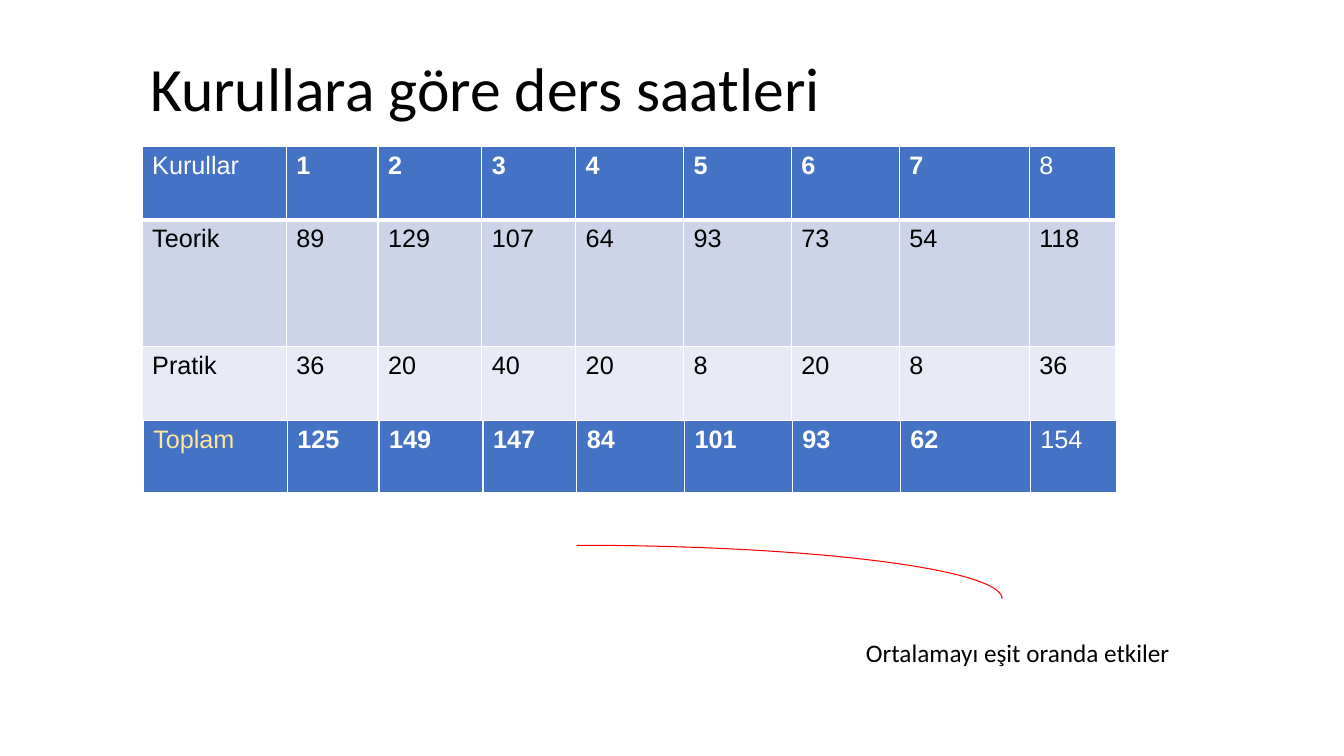
import pptx
import pptx.dml.color
import pptx.enum.shapes
import pptx.enum.text
import pptx.oxml.ns
import pptx.util
from lxml import etree

Inches = pptx.util.Inches
Pt = pptx.util.Pt
RGBColor = pptx.dml.color.RGBColor

BLACK = RGBColor(0x00, 0x00, 0x00)
WHITE = RGBColor(0xFF, 0xFF, 0xFF)
BLUE = RGBColor(0x44, 0x72, 0xC4)
LAVENDER = RGBColor(0xCD, 0xD4, 0xEA)
PALE = RGBColor(0xE8, 0xEB, 0xF5)
GOLD = RGBColor(0xFF, 0xE6, 0x99)
RED = RGBColor(0xFF, 0x00, 0x00)

TITLE = "Kurullara göre ders saatleri"
REMARK = "Ortalamayı eşit oranda etkiler"
COLUMN_WIDTHS = [1.43, 0.91, 1.03, 0.93, 1.07, 1.07, 1.07, 1.29, 0.86]

HEADER = {"height": 0.73, "fill": BLUE, "label": WHITE, "text": WHITE, "bold": True, "bottom": 3}
THEORY = {"height": 1.26, "fill": LAVENDER, "label": BLACK, "text": BLACK, "bold": False, "bottom": 1}
PRACTICE = {**THEORY, "height": 0.73, "fill": PALE}
TOTAL = {**HEADER, "label": GOLD}

HOURS_ROWS = [
    (["Kurullar", "1", "2", "3", "4", "5", "6", "7", "8"], HEADER),
    (["Teorik", "89", "129", "107", "64", "93", "73", "54", "118"], THEORY),
    (["Pratik", "36", "20", "40", "20", "8", "20", "8", "36"], PRACTICE),
]
TOTAL_ROWS = [
    (["Toplam", "125", "149", "147", "84", "101", "93", "62", "154"], TOTAL),
]


def write(paragraph, text, size, font_name, color, bold=False):
    run = paragraph.add_run()
    run.text = text
    font_format = {"size": Pt(size), "name": font_name, "bold": bold}
    for name, value in font_format.items():
        setattr(run.font, name, value)
    run.font.color.rgb = color


def add_text(slide, box, text, size, anchor, line_spacing):
    frame = slide.shapes.add_textbox(*map(Inches, box)).text_frame
    frame.word_wrap = True
    frame.vertical_anchor = anchor
    frame.paragraphs[0].line_spacing = line_spacing
    write(frame.paragraphs[0], text, size, "Calibri", BLACK)


def set_borders(cell, widths):
    properties = cell._tc.get_or_add_tcPr()
    qualified = pptx.oxml.ns.qn
    for side, width in widths.items():
        line = etree.SubElement(properties, qualified("a:ln" + side), w=str(Pt(width)))
        fill = etree.SubElement(line, qualified("a:solidFill"))
        etree.SubElement(fill, qualified("a:srgbClr"), val=str(WHITE))


def add_hours_table(slide, left, top, rows):
    height = sum(style["height"] for _, style in rows)
    box = (left, top, sum(COLUMN_WIDTHS), height)
    table = slide.shapes.add_table(len(rows), len(COLUMN_WIDTHS), *map(Inches, box)).table
    for column, width in zip(table.columns, COLUMN_WIDTHS):
        column.width = Inches(width)
    last = len(COLUMN_WIDTHS) - 1
    top_border = 1
    for row, (values, style) in zip(table.rows, rows):
        row.height = Inches(style["height"])
        for index, (cell, value) in enumerate(zip(row.cells, values)):
            set_borders(cell, {"L": 1, "R": 1, "T": top_border, "B": style["bottom"]})
            cell.fill.solid()
            cell.fill.fore_color.rgb = style["fill"]
            color = style["label"] if index == 0 else style["text"]
            bold = style["bold"] and 0 < index < last
            write(cell.text_frame.paragraphs[0], value, 18, "Arial", color, bold)
        top_border = style["bottom"]


def main():
    presentation = pptx.Presentation()
    presentation.slide_width = Inches(13.33)
    presentation.slide_height = Inches(7.5)
    slide = presentation.slides.add_slide(presentation.slide_layouts[6])

    anchors = pptx.enum.text.MSO_ANCHOR
    add_text(slide, (1.39, 0.4, 11.03, 1.02), TITLE, 44, anchors.MIDDLE, 0.9)
    add_hours_table(slide, 1.41, 1.45, HOURS_ROWS)

    arc_box = map(Inches, (1.5, 5.41, 8.44, 1.06))
    arc = slide.shapes.add_shape(pptx.enum.shapes.MSO_SHAPE.ARC, *arc_box)
    arc.shadow.inherit = False
    arc.fill.background()
    arc.line.color.rgb = RED
    arc.line.width = Pt(0.75)

    add_text(slide, (8.49, 6.27, 3.34, 0.4), REMARK, 18, anchors.TOP, 1.0)
    add_hours_table(slide, 1.42, 4.17, TOTAL_ROWS)
    presentation.save("out.pptx")


if __name__ == "__main__":
    main()
